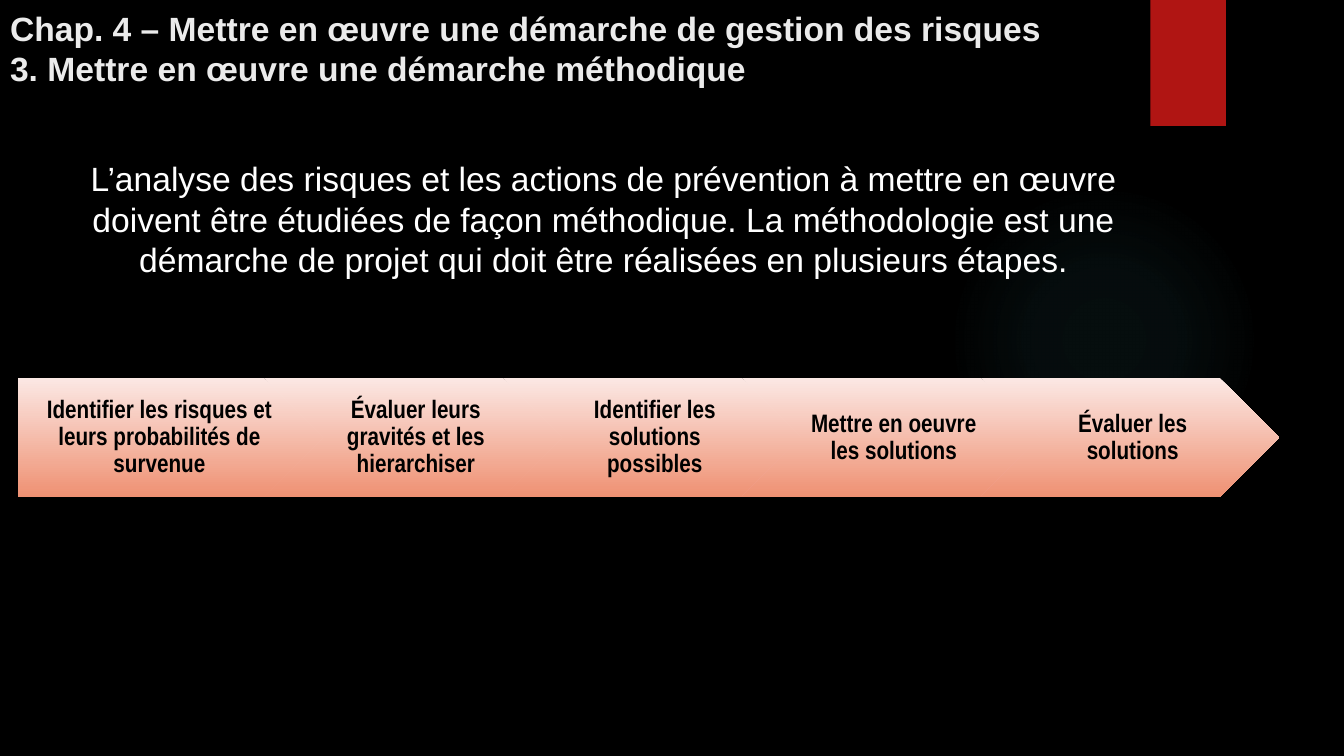
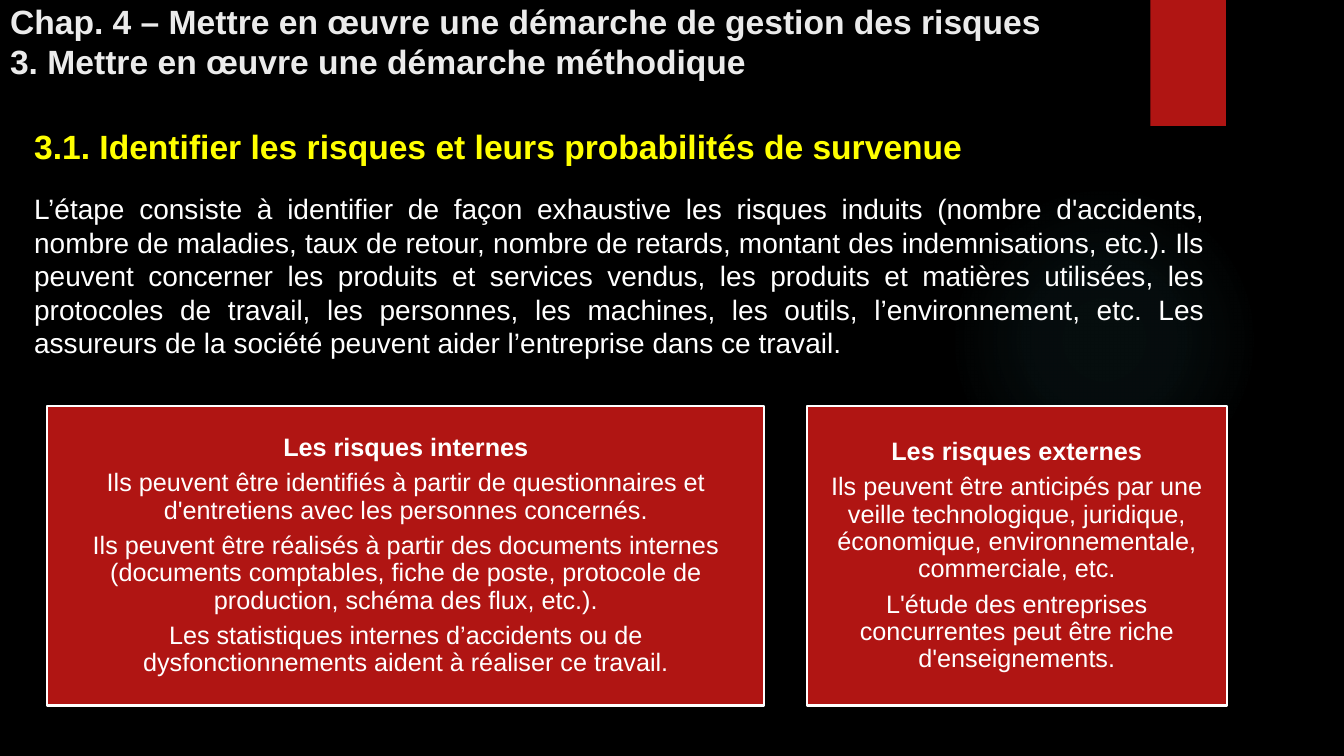
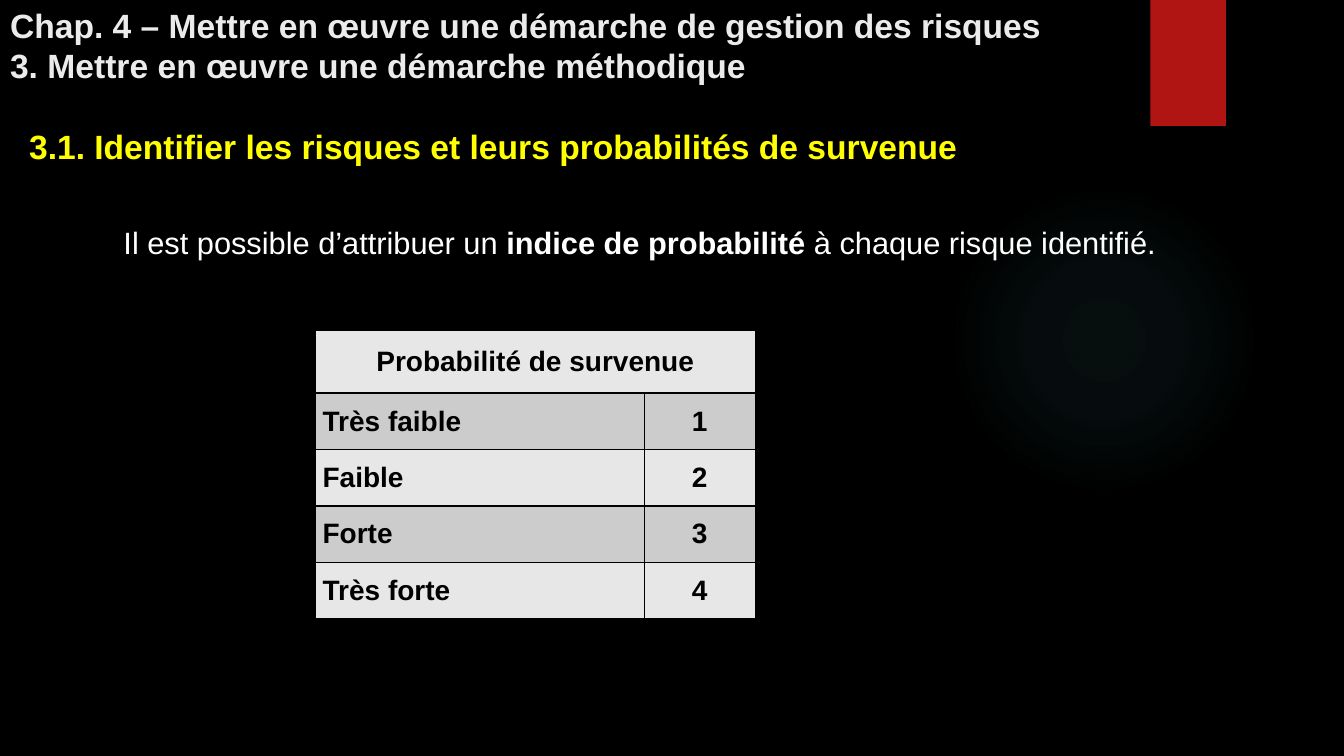
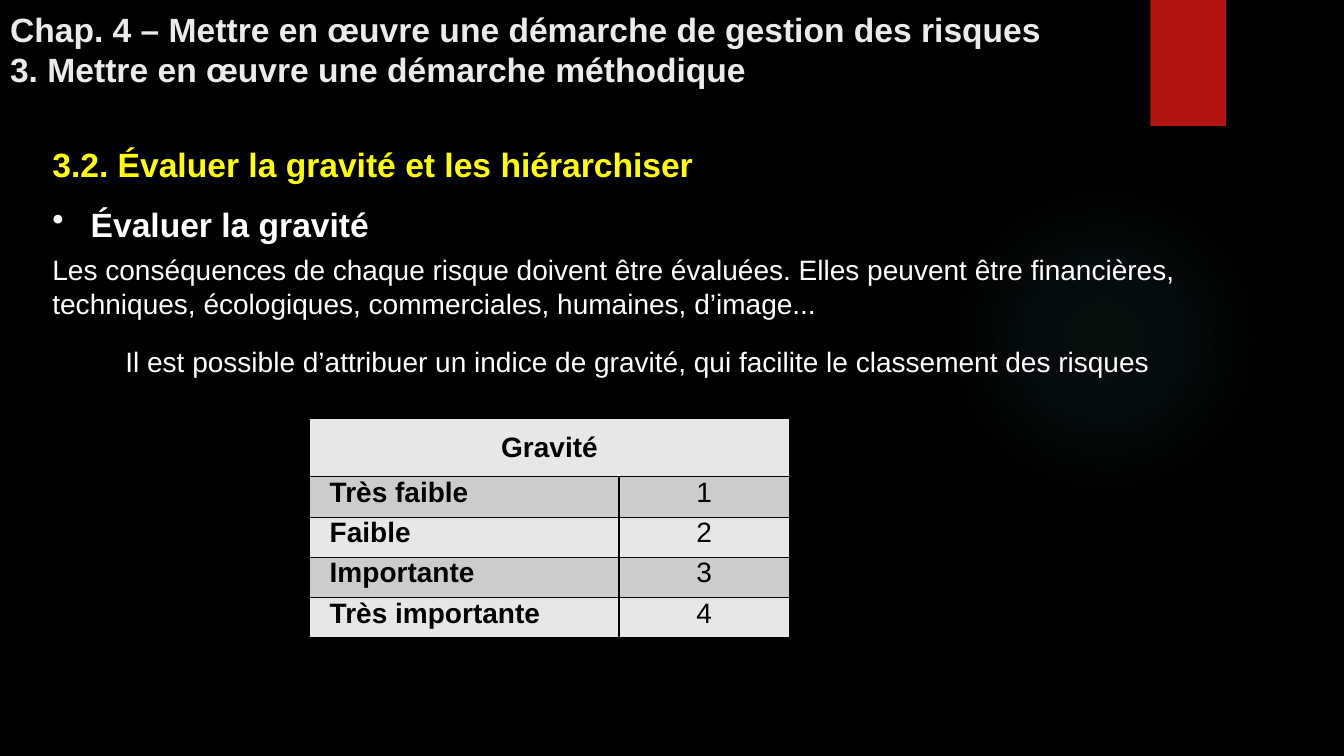
from dataclasses import dataclass

from pptx import Presentation
from pptx.dml.color import RGBColor
from pptx.enum.shapes import MSO_SHAPE as Shape
from pptx.enum.text import MSO_ANCHOR as Anchor, MSO_AUTO_SIZE as AutoSize, PP_ALIGN as Align
from pptx.oxml import parse_xml
from pptx.oxml.ns import nsdecls
from pptx.util import Pt

PX = 9144
COLORS = {
    "black": "000000",
    "white": "FFFFFF",
    "title": "EBEBEB",
    "heading": "FFFF00",
    "red": "B01513",
    "halo": "50B9C1",
    "step_top": "FBE8E4",
    "step_bottom": "EF9173",
    "row_light": "E7E7E7",
    "row_dark": "CCCCCC",
}
CHAPTER = (
    "Chap. 4 – Mettre en œuvre une démarche de gestion des risques\v"
    "3. Mettre en œuvre une démarche méthodique"
)
IDENTIFY = "3.1. Identifier les risques et leurs probabilités de survenue"


def rgb(name):
    """Return a named colour."""
    return RGBColor.from_string(COLORS[name])


@dataclass
class Para:
    """One paragraph; text between asterisks is bold."""

    text: str
    size: int = 20
    color: str = "white"
    bold: bool = False
    align: Align = Align.LEFT
    before: int = 0
    after: int = 0
    line: float = 1.0
    font: str = "Arial"
    bullet: int = 0


def heading(text, align=Align.JUSTIFY):
    """Return a yellow section heading."""
    return Para(text, 24, "heading", True, align)


def card_para(text, bold=False, font="Arial"):
    """Return a centred paragraph for a filled shape."""
    color = "white" if font == "Arial" else "black"
    return Para(text, 18, color, bold, Align.CENTER, after=6, line=0.9, font=font)


class Deck:
    """Holds the presentation, its shared style and the current page."""

    def __init__(self):
        """Start an empty wide presentation on black."""
        self.show = Presentation()
        self.show.slide_width, self.show.slide_height = 1333 * PX, 750 * PX
        background = self.show.slide_master.background.fill
        background.solid()
        background.fore_color.rgb = rgb("black")
        self.layout = self.show.slide_layouts[5]
        self.page = None

    def add_page(self, title_height):
        """Open a page with the chapter title."""
        first = self.page is None
        self.page = self.show.slides.add_slide(self.layout)
        if first:
            self.decorate_layout()
        title = self.page.shapes.title
        title.left, title.top, title.width, title.height = 0, 0, 1307 * PX, title_height * PX
        self.fill_frame(title.text_frame, [Para(CHAPTER, 24, "title", True)], Anchor.BOTTOM)

    def decorate_layout(self):
        """Put the halo and the red band on the shared layout."""
        halo = self.shape(Shape.OVAL, (941, 183, 308, 308))
        stops = "".join(
            f'<a:gs pos="{position}"><a:srgbClr val="{COLORS["halo"]}">'
            f'<a:alpha val="{alpha}"/></a:srgbClr></a:gs>'
            for position, alpha in ((0, 7000), (36000, 6000), (69000, 0))
        )
        halo.element.spPr.insert(2, parse_xml(
            f'<a:gradFill {nsdecls("a")}><a:gsLst>{stops}</a:gsLst><a:path path="circle">'
            '<a:fillToRect l="50000" t="50000" r="50000" b="50000"/></a:path></a:gradFill>'
        ))
        band = self.shape(Shape.RECTANGLE, (1141, 0, 75, 125), "red")
        for shape in (halo, band):
            self.layout.shapes.element.append(shape.element)

    def fill_frame(self, frame, paras, anchor=Anchor.TOP, insets=(10, 5, 10, 5)):
        """Set up a text frame and fill it with paragraphs."""
        frame.word_wrap = True
        frame.auto_size = AutoSize.NONE
        frame.vertical_anchor = anchor
        (frame.margin_left, frame.margin_top,
         frame.margin_right, frame.margin_bottom) = (inset * PX for inset in insets)
        self.fill_paragraphs(frame, paras)

    def fill_paragraphs(self, frame, paras):
        """Add and format the paragraphs of a frame."""
        for index, para in enumerate(paras):
            target = frame.add_paragraph() if index else frame.paragraphs[0]
            parts = para.text.split("*")
            if len(parts) == 1:
                target.text = para.text
            else:
                for position, part in enumerate(parts):
                    span = target.add_run()
                    span.text = part
                    span.font.bold = position % 2 == 1
            if para.bullet:
                properties = target._p.get_or_add_pPr()
                properties.set("marL", str(para.bullet * PX))
                properties.set("indent", str(-para.bullet * PX))
                properties.append(parse_xml(f'<a:buChar {nsdecls("a")} char="•"/>'))
            target.alignment = para.align
            target.line_spacing = para.line
            target.space_before, target.space_after = Pt(para.before), Pt(para.after)
            font = target.font
            font.name, font.size, font.bold = para.font, Pt(para.size), para.bold
            font.color.rgb = rgb(para.color)

    def text(self, box, paras, **options):
        """Add a text box."""
        area = self.page.shapes.add_textbox(*(length * PX for length in box))
        self.fill_frame(area.text_frame, paras, **options)

    def shape(self, kind, box, fill=None, line=None):
        """Add a preset shape with a plain fill and an optional outline."""
        shape = self.page.shapes.add_shape(kind, *(length * PX for length in box))
        shape.shadow.inherit = False
        if fill:
            shape.fill.solid()
            shape.fill.fore_color.rgb = rgb(fill)
        if line:
            shape.line.color.rgb = rgb(line)
            shape.line.width = Pt(1.5)
        else:
            shape.line.fill.background()
        return shape

    def card(self, box, title, texts):
        """Add a red card with a bold title."""
        card = self.shape(Shape.RECTANGLE, box, "red", "white")
        paras = [card_para(title, True)] + [card_para(text) for text in texts]
        self.fill_frame(card.text_frame, paras, Anchor.MIDDLE, (7, 7, 7, 7))

    def step(self, kind, box, text, inset):
        """Add one gradient arrow of the process."""
        arrow = self.shape(kind, box)
        arrow.fill.gradient()
        arrow.fill.gradient_angle = 270
        for stop, color in zip(arrow.fill.gradient_stops, ("step_top", "step_bottom")):
            stop.color.rgb = rgb(color)
        para = card_para(text, True, "Arial Narrow")
        self.fill_frame(arrow.text_frame, [para], Anchor.MIDDLE, (inset, 5, 3, 5))

    def scale_table(self, origin, widths, heights, title, levels, inset, anchor, bold_index):
        """Add a table that numbers the levels from 1."""
        left, top = origin
        grid = self.page.shapes.add_table(
            len(levels) + 1, 2, left * PX, top * PX, sum(widths) * PX,
            (heights[0] + heights[1] * len(levels)) * PX,
        ).table
        grid.first_row = grid.horz_banding = False
        for column, width in zip(grid.columns, widths):
            column.width = width * PX
        rows = [(title, "")] + [(level, str(index)) for index, level in enumerate(levels, 1)]
        for row_index, row in enumerate(rows):
            header = row_index == 0
            grid.rows[row_index].height = heights[min(row_index, 1)] * PX
            for column_index, text in enumerate(row):
                cell = grid.cell(row_index, column_index)
                cell.fill.solid()
                cell.fill.fore_color.rgb = rgb(("row_light", "row_dark")[row_index % 2])
                cell.vertical_anchor = Anchor.MIDDLE if header else anchor
                cell.margin_left = cell.margin_right = inset * PX
                cell.margin_top = cell.margin_bottom = 0
                self.border(cell)
                label = column_index == 0
                align = Align.JUSTIFY if label and not header else Align.CENTER
                bold = label or bold_index
                para = Para(text, 20, "black", bold, align, after=1)
                self.fill_paragraphs(cell.text_frame, [para])
        grid.cell(0, 0).merge(grid.cell(0, 1))

    def border(self, cell):
        """Draw thin black lines around a cell."""
        properties = cell._tc.get_or_add_tcPr()
        for index, side in enumerate(("lnL", "lnR", "lnT", "lnB")):
            properties.insert(index, parse_xml(
                f'<a:{side} {nsdecls("a")} w="12700"><a:solidFill>'
                f'<a:srgbClr val="{COLORS["black"]}"/></a:solidFill></a:{side}>'
            ))


def method_page(deck):
    """Show the steps of the method."""
    deck.add_page(93)
    deck.text((54, 152, 1089, 131), [Para(
        "L’analyse des risques et les actions de prévention à mettre en œuvre doivent être "
        "étudiées de façon méthodique. La méthodologie est une démarche de projet qui doit "
        "être réalisées en plusieurs étapes.", 24, align=Align.CENTER)])
    deck.step(Shape.PENTAGON, (18, 375, 303, 118),
              "Identifier les risques et leurs probabilités de survenue", 10)
    steps = ("Évaluer leurs gravités et les hierarchiser", "Identifier les solutions possibles",
             "Mettre en oeuvre les solutions", "Évaluer les solutions")
    for index, text in enumerate(steps):
        deck.step(Shape.CHEVRON, (262 + 237 * index, 375, 296, 118), text, 8)


def risks_page(deck):
    """Compare internal and external risks."""
    deck.add_page(86)
    deck.text((24, 120, 1181, 244), [heading(IDENTIFY), Para(
        "L’étape consiste à identifier de façon exhaustive les risques induits (nombre "
        "d'accidents, nombre de maladies, taux de retour, nombre de retards, montant des "
        "indemnisations, etc.). Ils peuvent concerner les produits et services vendus, les "
        "produits et matières utilisées, les protocoles de travail, les personnes, les "
        "machines, les outils, l’environnement, etc. Les assureurs de la société peuvent "
        "aider l’entreprise dans ce travail.", align=Align.JUSTIFY, before=18)])
    deck.card((47, 403, 711, 297), "Les risques internes", (
        "Ils peuvent être identifiés à partir de questionnaires et d'entretiens avec les "
        "personnes concernés.",
        "Ils peuvent être réalisés à partir des documents internes (documents comptables, "
        "fiche de poste, protocole de production, schéma des flux, etc.).",
        "Les statistiques internes d’accidents ou de dysfonctionnements aident à réaliser "
        "ce travail."))
    deck.card((800, 403, 417, 297), "Les risques externes", (
        "Ils peuvent être anticipés par une veille technologique, juridique, économique, "
        "environnementale, commerciale, etc.",
        "L'étude des entreprises concurrentes peut être riche d'enseignements."))


def probability_page(deck):
    """Show the probability scale."""
    deck.add_page(90)
    deck.text((19, 120, 1181, 50), [heading(IDENTIFY)])
    deck.text((61, 217, 1147, 93), [Para(
        "Il est possible d’attribuer un *indice de probabilité* à chaque risque identifié.",
        22, align=Align.CENTER)])
    deck.scale_table((313, 328), (326, 110), (62, 56), "Probabilité de survenue",
                     ("Très faible", "Faible", "Forte", "Très forte"),
                     7, Anchor.MIDDLE, True)


def severity_page(deck):
    """Show the severity scale."""
    deck.add_page(94)
    deck.scale_table((307, 415), (307, 169), (58, 40), "Gravité",
                     ("Très faible", "Faible", "Importante", "Très importante"),
                     20, Anchor.TOP, False)
    deck.text((27, 133, 1196, 252), [
        heading("3.2. Évaluer la gravité et les hiérarchiser", Align.LEFT),
        Para("Évaluer la gravité", 24, bold=True, before=14, bullet=38),
        Para("Les conséquences de chaque risque doivent être évaluées. Elles peuvent être "
             "financières, techniques, écologiques, commerciales, humaines, d’image...",
             before=6, after=18),
        Para("Il est possible d’attribuer un indice de gravité, qui facilite le classement "
             "des risques", align=Align.CENTER),
    ], anchor=Anchor.MIDDLE, insets=(25, 8, 10, 8))


def main():
    """Build and save the deck."""
    deck = Deck()
    for build in (method_page, risks_page, probability_page, severity_page):
        build(deck)
    deck.show.save("out.pptx")


if __name__ == "__main__":
    main()
